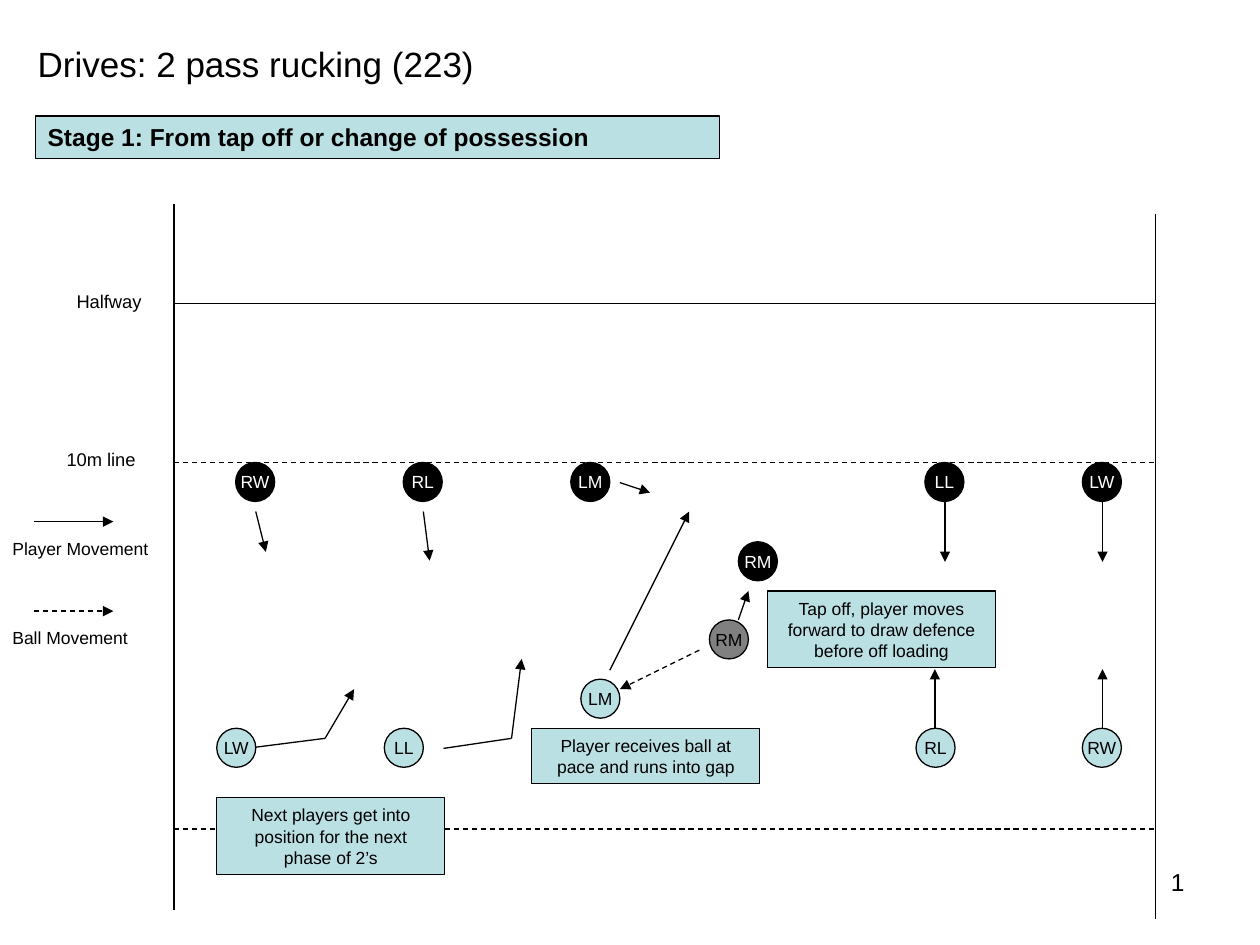
from pptx import Presentation
from pptx import util as u
from pptx.dml.color import RGBColor
from pptx.enum import dml, shapes, text
from pptx.oxml.ns import qn
from lxml import etree

THEME = {
    "font": "Arial",
    "black": "000000", "white": "FFFFFF", "grey": "808080", "aqua": "BBE0E3",
    "title": 20, "stage": 14, "number": 14, "label": 10.5, "body": 10,
    "line": 0.75,
}

# Pitch edges and cross lines
LEFT, RIGHT = 1.38, 9.17
SIDELINES = [(LEFT, 1.62, LEFT, 7.22), (RIGHT, 1.7, RIGHT, 7.29)]
CROSS_LINES = [(2.41, False), (3.67, True), (6.58, True)]  # height, dashed

# Players: name, left, top
PLAYER_SIZE = 0.31
TEAMS = [
    ("aqua", "black", [("LW", 1.72, 5.78), ("LL", 3.05, 5.78), ("LM", 4.61, 5.39),
                       ("RL", 7.27, 5.78), ("RW", 8.59, 5.78)]),
    ("grey", "black", [("RM", 5.63, 4.92)]),
    ("black", "white", [("RW", 1.87, 3.67), ("RL", 3.2, 3.67), ("LM", 4.53, 3.67),
                        ("RM", 5.86, 4.3), ("LL", 7.34, 3.67), ("LW", 8.59, 3.67)]),
]

# Each run is a chain of points; the arrowhead sits on the last one
RUNS = [
    [(4.92, 3.83), (5.16, 3.91)],
    [(2.03, 4.06), (2.11, 4.38)],
    [(3.36, 4.06), (3.41, 4.45)],
    [(7.5, 3.98), (7.5, 4.46)],
    [(8.75, 3.98), (8.75, 4.46)],
    [(7.42, 5.78), (7.42, 5.31)],
    [(8.75, 5.78), (8.75, 5.31)],
    [(4.84, 5.32), (5.47, 4.06)],
    [(5.86, 4.92), (5.94, 4.69)],
    [(2.03, 5.93), (2.58, 5.86), (2.81, 5.47)],
    [(3.52, 5.94), (4.06, 5.86), (4.14, 5.23)],
]
PASS = (5.55, 5.16, 4.92, 5.47)

CALLOUTS = [
    ("Tap off, player moves forward to draw defence before off loading", (6.09, 4.69, 1.81, 0.61)),
    ("Player receives ball at pace and runs into gap", (4.22, 5.78, 1.81, 0.44)),
    ("Next players get into position for the next phase of 2’s", (1.72, 6.33, 1.81, 0.61)),
]

# Key: wording, arrow height, text width, dashed
KEY = [("Player Movement", 4.14, 1.28, False), ("Ball Movement", 4.85, 1.12, True)]

TITLE = ("Drives: 2 pass rucking (223)", (0.2, 0.29, 3.69, 0.44))
STAGE = ("Stage 1: From tap off or change of possession", (0.28, 0.92, 5.43, 0.34))
LINE_LABELS = [("Halfway", (0.51, 2.25, 0.73, 0.28)), ("10m line", (0.43, 3.51, 0.76, 0.28))]
PAGE_NUMBER = ("1", (7.17, 6.83, 2.33, 0.52))


def color(name):
    return RGBColor.from_string(THEME[name])


def inches(values):
    return [u.Inches(value) for value in values]


def add_line(page, x1, y1, x2, y2, dashed=False, arrow=False):
    line = page.shapes.add_connector(shapes.MSO_CONNECTOR.STRAIGHT, *inches((x1, y1, x2, y2)))
    line.line.color.rgb = color("black")
    line.line.width = u.Pt(THEME["line"])
    if dashed:
        line.line.dash_style = dml.MSO_LINE.DASH
    if arrow:
        outline = line.line._get_or_add_ln()
        etree.SubElement(outline, qn("a:tailEnd"), type="triangle")
    etree.SubElement(line._element.spPr, qn("a:effectLst"))
    return line


def add_text(page, words, at, size="body", ink="black", fill=None, kind=None,
             align="LEFT", anchor="TOP", wrap=True, bold=False):
    """Add a text box, or a filled and outlined shape when kind is given."""
    if kind is None:
        box = page.shapes.add_textbox(*inches(at))
    else:
        box = page.shapes.add_shape(kind, *inches(at))
        box.shadow.inherit = False
        box.fill.solid()
        box.fill.fore_color.rgb = color(fill)
        box.line.color.rgb = color("black")
        box.line.width = u.Pt(THEME["line"])
    frame = box.text_frame
    frame.word_wrap = wrap
    frame.vertical_anchor = text.MSO_ANCHOR[anchor]
    para = frame.paragraphs[0]
    para.alignment = text.PP_ALIGN[align]
    span = para.add_run()
    span.text = words
    span.font.name = THEME["font"]
    span.font.size = u.Pt(THEME[size])
    span.font.bold = bold
    span.font.color.rgb = color(ink)
    return box


def add_pitch(page):
    for ends in SIDELINES:
        add_line(page, *ends)
    for height, dashed in CROSS_LINES:
        add_line(page, LEFT, height, RIGHT, height, dashed=dashed)
    for words, at in LINE_LABELS:
        add_text(page, words, at, size="label", wrap=False)


def add_players(page):
    for fill, ink, players in TEAMS:
        for name, left, top in players:
            add_text(page, name, (left, top, PLAYER_SIZE, PLAYER_SIZE), ink=ink, fill=fill,
                     kind=shapes.MSO_SHAPE.OVAL, align="CENTER", anchor="MIDDLE", wrap=False)


def add_moves(page):
    for points in RUNS:
        for start, end in zip(points, points[1:]):
            add_line(page, *start, *end, arrow=end == points[-1])
    add_line(page, *PASS, dashed=True, arrow=True)


def add_key(page):
    parts = []
    for words, height, width, dashed in KEY:
        parts.append(add_line(page, 0.27, height, 0.9, height, dashed=dashed, arrow=True))
        parts.append(add_text(page, words, (0, height + 0.08, width, 0.27), wrap=False))
    page.shapes.add_group_shape(parts)


def main():
    deck = Presentation()
    deck.slide_width, deck.slide_height = inches((10, 7.5))
    page = deck.slides.add_slide(deck.slide_layouts[6])
    add_pitch(page)
    add_players(page)
    add_key(page)
    add_moves(page)
    for words, at in CALLOUTS:
        add_text(page, words, at, fill="aqua", kind=shapes.MSO_SHAPE.RECTANGLE,
                 align="CENTER", anchor="MIDDLE")
    add_text(page, *TITLE, size="title", wrap=False)
    add_text(page, *STAGE, size="stage", fill="aqua", kind=shapes.MSO_SHAPE.RECTANGLE, bold=True)
    add_text(page, *PAGE_NUMBER, size="number", align="RIGHT")
    deck.save("out.pptx")


if __name__ == "__main__":
    main()
